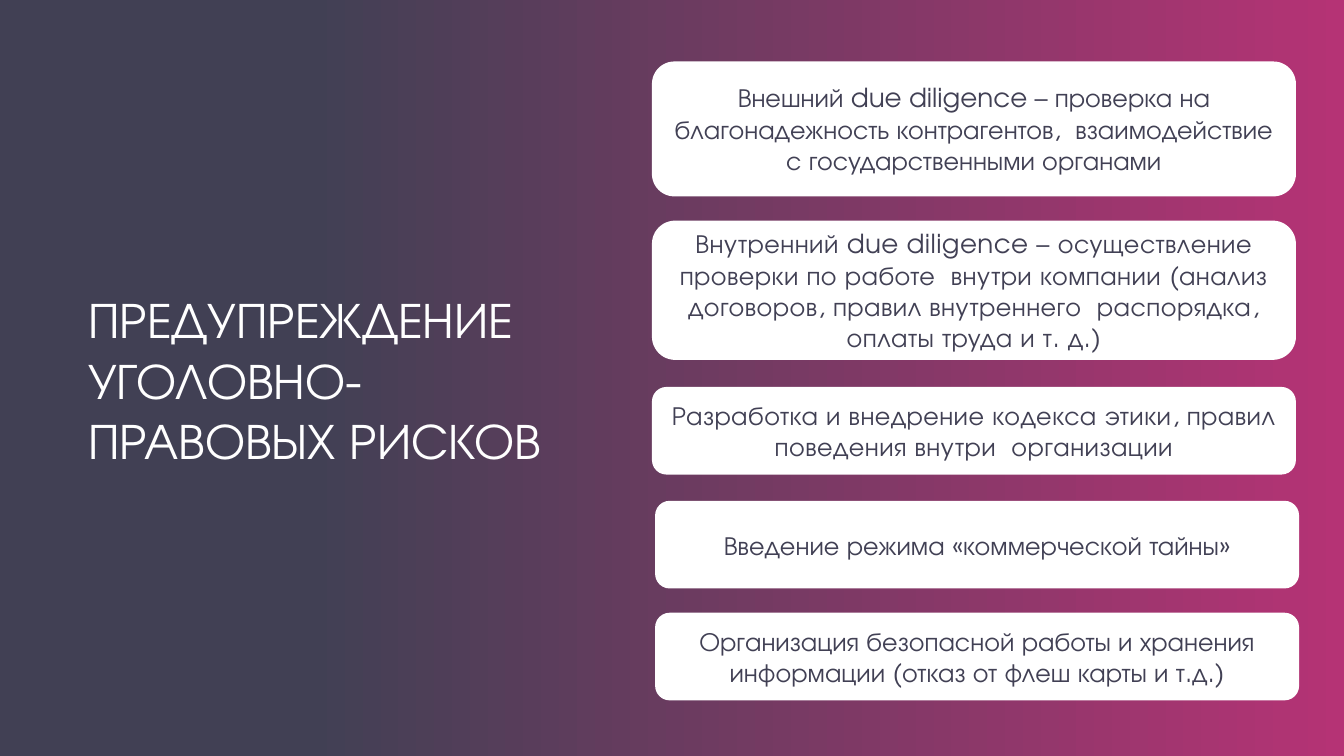
import pptx
import pptx.dml.color
import pptx.enum.shapes
import pptx.enum.text
import pptx.util
from pptx.util import Cm

FONT = "TeX Gyre Adventor"
DARK, PINK, WHITE = "414054", "B53375", "FFFFFF"
CARD_WIDTH = 16.23

# Left, top, height in centimetres, letter spacing in points, wording
CARDS = [
    (16.43, 1.55, 3.4, 0,
     "Внешний due diligence – проверка на благонадежность контрагентов,  "
     "взаимодействие с государственными органами"),
    (16.43, 5.56, 3.51, 0.3,
     "Внутренний due diligence – осуществление проверки по работе  внутри компании "
     "(анализ договоров, правил внутреннего  распорядка, оплаты труда и т. д.)"),
    (16.43, 9.75, 2.21, 0.3,
     "Разработка и внедрение кодекса этики, правил поведения внутри  организации"),
    (16.51, 12.62, 2.21, 0, "Введение режима «коммерческой тайны»"),
    (16.51, 15.44, 2.21, 0,
     "Организация безопасной работы и хранения информации "
     "(отказ от флеш карты и т.д.)"),
]


def color(value):
    return pptx.dml.color.RGBColor.from_string(value)


def write_paragraph(paragraph, text, size, fill, align="LEFT", spacing=0):
    paragraph.alignment = getattr(pptx.enum.text.PP_ALIGN, align)
    run = paragraph.add_run()
    run.text = text
    run.font.name = FONT
    run.font.size = pptx.util.Pt(size)
    run.font.color.rgb = color(fill)
    if spacing:
        run._r.get_or_add_rPr().set("spc", str(round(spacing * 100)))


def paint_background(slide):
    fill = slide.background.fill
    fill.gradient()
    fill.gradient_angle = 0
    for stop, (position, value) in zip(fill.gradient_stops, [(0.23, DARK), (1, PINK)]):
        stop.position = position
        stop.color.rgb = color(value)


def add_title(slide, lines):
    shape = slide.shapes.add_textbox(Cm(1.98), Cm(7.14), Cm(13.26), Cm(4.88))
    frame = shape.text_frame
    frame.word_wrap = True
    for index, line in enumerate(lines):
        paragraph = frame.add_paragraph() if index else frame.paragraphs[0]
        write_paragraph(paragraph, line, size=36, fill=WHITE)


def add_card(slide, left, top, height, spacing, text):
    shape = slide.shapes.add_shape(
        pptx.enum.shapes.MSO_SHAPE.ROUNDED_RECTANGLE,
        Cm(left), Cm(top), Cm(CARD_WIDTH), Cm(height))
    shape.shadow.inherit = False
    shape.fill.solid()
    shape.fill.fore_color.rgb = color(WHITE)
    shape.line.fill.background()
    frame = shape.text_frame
    frame.word_wrap = True
    frame.vertical_anchor = pptx.enum.text.MSO_ANCHOR.MIDDLE
    write_paragraph(frame.paragraphs[0], text, size=18.7, fill=DARK,
                    align="CENTER", spacing=spacing)


def main():
    presentation = pptx.Presentation()
    presentation.slide_width = Cm(33.87)
    presentation.slide_height = Cm(19.05)
    slide = presentation.slides.add_slide(presentation.slide_layouts[6])

    # Background and heading
    paint_background(slide)
    add_title(slide, ["ПРЕДУПРЕЖДЕНИЕ", "УГОЛОВНО-ПРАВОВЫХ РИСКОВ"])

    # Column of measures
    for card in CARDS:
        add_card(slide, *card)

    presentation.save("out.pptx")


if __name__ == "__main__":
    main()
